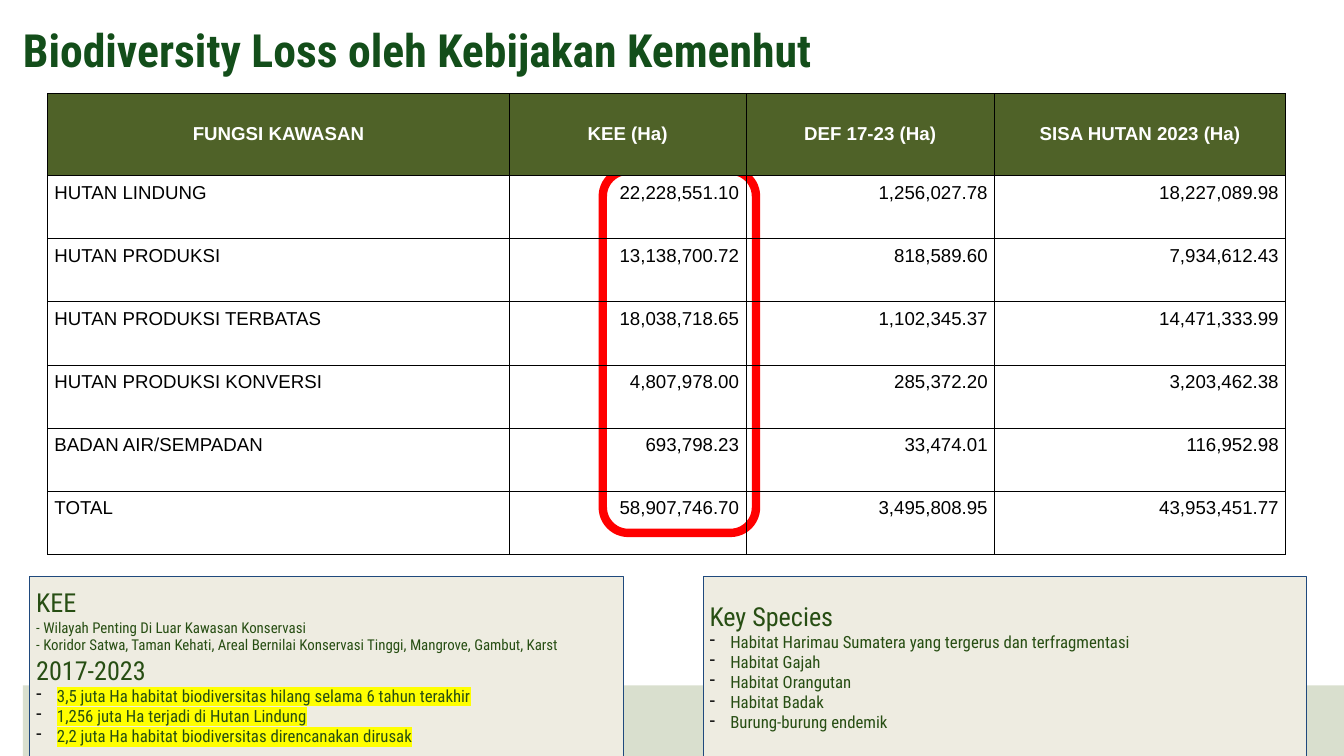
from dataclasses import dataclass

from lxml.etree import SubElement
from pptx import Presentation
from pptx.dml.color import RGBColor as Rgb
from pptx.enum.shapes import MSO_SHAPE as Shape
from pptx.enum.text import MSO_ANCHOR as Anchor, MSO_AUTO_SIZE as AutoSize, PP_ALIGN as Align
from pptx.oxml import parse_xml
from pptx.oxml.ns import nsdecls, qn
from pptx.util import Inches, Pt


@dataclass(frozen=True)
class Theme:
    heading_font: str = "Roboto Condensed"
    table_font: str = "Arial"
    title: str = "134E1A"
    text: str = "274E13"
    black: str = "000000"
    white: str = "FFFFFF"
    band: str = "D9DFCE"
    panel: str = "EEECE1"
    panel_line: str = "1F497D"
    header: str = "4F6228"
    ring: str = "FF0000"
    marker: str = "FFFF00"
    title_size: float = 49
    panel_title_size: float = 28
    table_size: float = 20
    bullet_size: float = 18
    note_size: float = 16


@dataclass(frozen=True)
class Box:
    """A region in grid units: the page is 20 columns by 11.25 rows."""
    left: float
    top: float
    width: float
    height: float

    def inner(self, left, top, width, height):
        return Box(self.left + left, self.top + top, width, height)

    def lengths(self):
        return [Inches(v) for v in (self.left, self.top, self.width, self.height)]


THEME = Theme()
COLUMNS, ROWS = 20, 11.25
MARGIN = Inches(0.1)
PLAIN_TABLE = "{2D5ABB26-0587-4C30-8999-92F81FD0307C}"

HEADINGS = ["FUNGSI KAWASAN", "KEE (Ha)", "DEF 17-23 (Ha)", "SISA HUTAN 2023 (Ha)"]
FORESTS = [
    ["HUTAN LINDUNG", "22,228,551.10", "1,256,027.78", "18,227,089.98"],
    ["HUTAN PRODUKSI", "13,138,700.72", "818,589.60", "7,934,612.43"],
    ["HUTAN PRODUKSI TERBATAS", "18,038,718.65", "1,102,345.37", "14,471,333.99"],
    ["HUTAN PRODUKSI KONVERSI", "4,807,978.00", "285,372.20", "3,203,462.38"],
    ["BADAN AIR/SEMPADAN", "693,798.23", "33,474.01", "116,952.98"],
    ["TOTAL", "58,907,746.70", "3,495,808.95", "43,953,451.77"],
]
# Panel lines: (style, text)
KEE_LINES = [
    ("title", "KEE"),
    ("note", "- Wilayah Penting Di Luar Kawasan Konservasi"),
    ("note", "- Koridor Satwa, Taman Kehati, Areal Bernilai Konservasi Tinggi, "
             "Mangrove, Gambut, Karst"),
    ("title", "2017-2023"),
    ("marked", "3,5 juta Ha habitat biodiversitas hilang selama 6 tahun terakhir"),
    ("marked", "1,256 juta Ha terjadi di Hutan Lindung"),
    ("marked", "2,2 juta Ha habitat biodiversitas direncanakan dirusak"),
]
SPECIES_LINES = [
    ("title", "Key Species"),
    ("bullet", "Habitat Harimau Sumatera yang tergerus dan terfragmentasi"),
    ("bullet", "Habitat Gajah"),
    ("bullet", "Habitat Orangutan"),
    ("bullet", "Habitat Badak"),
    ("bullet", "Burung-burung endemik"),
]


def rgb(value):
    return Rgb.from_string(value)


def format_font(font, name, size, color, bold=False):
    font.name, font.size, font.bold = name, Pt(size), bold
    font.color.rgb = rgb(color)


def set_margins(frame, margin):
    frame.margin_left = frame.margin_right = margin
    frame.margin_top = frame.margin_bottom = margin


def add_bullet(para):
    props = para._p.get_or_add_pPr()
    props.set("marL", str(Inches(0.31)))
    props.set("indent", str(-Inches(0.31)))
    color = SubElement(props, qn("a:buClr"))
    SubElement(color, qn("a:srgbClr"), val=THEME.black)
    SubElement(props, qn("a:buChar"), char="-")


def highlight(span):
    mark = parse_xml(f'<a:highlight {nsdecls("a")}><a:srgbClr val="{THEME.marker}"/></a:highlight>')
    span._r.get_or_add_rPr().find(qn("a:latin")).addprevious(mark)


def add_figure(page, box, kind, fill=None, line=None, weight=0.75):
    figure = page.shapes.add_shape(kind, *box.lengths())
    figure.shadow.inherit = False
    if fill:
        figure.fill.solid()
        figure.fill.fore_color.rgb = rgb(fill)
    else:
        figure.fill.background()
    if line:
        figure.line.color.rgb = rgb(line)
        figure.line.width = Pt(weight)
    else:
        figure.line.fill.background()
    return figure


def place_title(page, box):
    title = page.shapes.title
    title.left, title.top, title.width, title.height = box.lengths()
    frame = title.text_frame
    frame.text = "Biodiversity Loss oleh Kebijakan Kemenhut"
    frame.word_wrap, frame.auto_size = True, AutoSize.NONE
    frame.vertical_anchor = Anchor.TOP
    set_margins(frame, 0)
    para = frame.paragraphs[0]
    para.alignment, para.line_spacing = Align.LEFT, 1.16
    format_font(para.runs[0].font, THEME.heading_font, THEME.title_size, THEME.title, True)


def add_panel(page, box, lines):
    panel = add_figure(page, box, Shape.FLOWCHART_PROCESS, THEME.panel, THEME.panel_line)
    sizes = {"title": THEME.panel_title_size, "note": THEME.note_size}
    frame = panel.text_frame
    frame.word_wrap, frame.vertical_anchor = True, Anchor.MIDDLE
    set_margins(frame, MARGIN)
    frame.text = "\n".join(text for _, text in lines)
    for para, (style, _) in zip(frame.paragraphs, lines):
        para.alignment = Align.LEFT
        if style in ("bullet", "marked"):
            add_bullet(para)
        span = para.runs[0]
        format_font(span.font, THEME.heading_font, sizes.get(style, THEME.bullet_size), THEME.text)
        if style == "marked":
            highlight(span)


def fill_cell(cell, text, align, is_header):
    cell.text = text
    set_margins(cell, MARGIN)
    cell.vertical_anchor = Anchor.MIDDLE if is_header else Anchor.TOP
    para = cell.text_frame.paragraphs[0]
    para.alignment = align
    format_font(para.runs[0].font, THEME.table_font, THEME.table_size,
                THEME.white if is_header else THEME.black, is_header)
    # Borders come before the fill
    props = cell._tc.get_or_add_tcPr()
    for side in ("lnL", "lnR", "lnT", "lnB"):
        border = SubElement(props, qn(f"a:{side}"), w=str(Pt(0.75)))
        SubElement(SubElement(border, qn("a:solidFill")), qn("a:srgbClr"), val=THEME.black)
    if is_header:
        cell.fill.solid()
        cell.fill.fore_color.rgb = rgb(THEME.header)
    else:
        cell.fill.background()


def add_forest_table(page, box):
    # Ring round the KEE figures, behind the see-through cells
    add_figure(page, box.inner(8.26, 1.15, 2.28, 5.39), Shape.ROUNDED_RECTANGLE,
               line=THEME.ring, weight=9)
    rows = [HEADINGS] + FORESTS
    table = page.shapes.add_table(len(rows), len(HEADINGS), *box.lengths()).table
    table.first_row = table.horz_banding = False
    table._tbl.tblPr.find(qn("a:tableStyleId")).text = PLAIN_TABLE
    for column, width in zip(table.columns, (6.87, 3.52, 3.7, 4.33)):
        column.width = Inches(width)
    for r, values in enumerate(rows):
        table.rows[r].height = Inches(0.94 if r else 1.22)
        for c, text in enumerate(values):
            align = Align.CENTER if r == 0 else Align.RIGHT if c else Align.LEFT
            fill_cell(table.cell(r, c), text, align, r == 0)


def main():
    deck = Presentation()
    deck.slide_width, deck.slide_height = Inches(COLUMNS), Inches(ROWS)
    page = deck.slides.add_slide(deck.slide_layouts[5])
    place_title(page, Box(0.34, 0.2, 13.05, 0.96))
    # Footer band
    add_figure(page, Box(0.34, 10.2, COLUMNS - 0.34, ROWS - 10.2), Shape.RECTANGLE, THEME.band)
    # Panels resting on the lower edge
    add_panel(page, Box(0.44, 8.58, 8.84, ROWS - 8.58), KEE_LINES)
    add_panel(page, Box(10.46, 8.58, 8.98, ROWS - 8.58), SPECIES_LINES)
    add_forest_table(page, Box(0.71, 1.39, 18.43, 6.84))
    deck.save("out.pptx")


if __name__ == "__main__":
    main()
